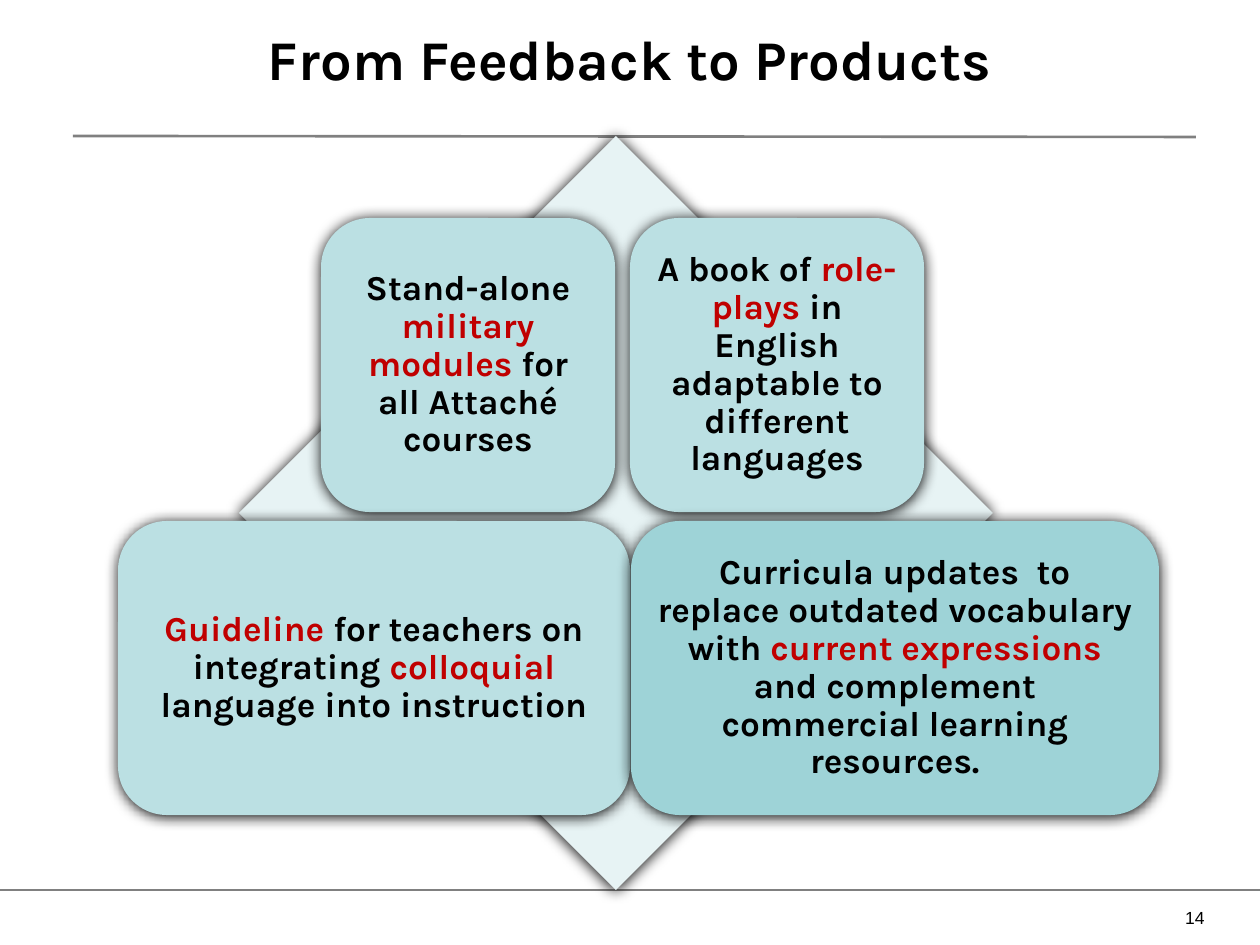
from lxml import etree
from pptx import Presentation
from pptx import util as u
from pptx.dml.color import RGBColor
from pptx.enum import shapes, text
from pptx.oxml import ns

SCALE = 914400 / 126
BLACK, RED, GREY = "000000", "C00000", "808080"
PALE, LIGHT, DEEP = "E7F3F4", "BBE0E3", "9ED3D7"


def px(*lengths):
    """Turn px lengths into EMU."""
    return [round(length * SCALE) for length in lengths]


def colour(code):
    """Turn a hex string into a colour."""
    return RGBColor.from_string(code)


def add_rule(page, start, end, weight):
    """Draw a plain grey line between two points."""
    rule = page.shapes.add_connector(shapes.MSO_CONNECTOR.STRAIGHT, *px(*start, *end))
    rule.line.color.rgb = colour(GREY)
    rule.line.width = u.Pt(weight)
    etree.SubElement(rule._element.spPr, ns.qn("a:effectLst"))


def add_panel(page, kind, box, fill):
    """Add a borderless shape with a soft dark shadow."""
    panel = page.shapes.add_shape(kind, *px(*box))
    panel.fill.solid()
    panel.fill.fore_color.rgb = colour(fill)
    panel.line.fill.background()
    panel.shadow.inherit = False
    effects = panel._element.spPr.find(ns.qn("a:effectLst"))
    shadow = etree.SubElement(
        effects, ns.qn("a:outerShdw"), blurRad=str(u.Pt(8.5)), dist=str(u.Pt(1)),
        dir="5400000", algn="ctr", rotWithShape="0")
    etree.SubElement(shadow, ns.qn("a:srgbClr"), val=BLACK)
    return panel


def add_card(page, box, fill, pieces):
    """Add a rounded card whose text alternates black and red."""
    card = add_panel(page, shapes.MSO_SHAPE.ROUNDED_RECTANGLE, box, fill)
    frame = card.text_frame
    frame.word_wrap = True
    frame.vertical_anchor = text.MSO_ANCHOR.MIDDLE
    inset, = px(10)
    frame.margin_left = frame.margin_right = inset
    frame.margin_top = frame.margin_bottom = inset
    para = frame.paragraphs[0]
    para.alignment = text.PP_ALIGN.CENTER
    para.line_spacing = 0.9
    para.font.size, para.font.name, para.font.bold = u.Pt(20), "Karla", True
    for wording, code in pieces:
        span = para.add_run()
        span.text = wording
        span.font.color.rgb = colour(code)


def add_title(page, box, wording):
    """Place and format the title placeholder."""
    title = page.shapes.title
    title.left, title.top, title.width, title.height = px(*box)
    title.text_frame.vertical_anchor = text.MSO_ANCHOR.MIDDLE
    para = title.text_frame.paragraphs[0]
    para.text = wording
    para.alignment = text.PP_ALIGN.CENTER
    para.font.size, para.font.name, para.font.bold = u.Pt(32), "Karla", True
    para.font.color.rgb = colour(BLACK)


def add_matrix(page, box):
    """Place the diamond and its four cards, top pair narrow and bottom pair wide."""
    left, top, side = box
    add_panel(page, shapes.MSO_SHAPE.DIAMOND, (left, top, side, side), PALE)
    height = 294
    upper, lower = top + 82, top + 385
    cards = [
        (82, upper, 294, LIGHT, [
            ("Stand-alone ", BLACK), ("military modules ", RED),
            ("for all Attaché courses", BLACK)]),
        (391, upper, 294, LIGHT, [
            ("A book of ", BLACK), ("role-plays", RED),
            (" in English adaptable to different languages", BLACK)]),
        (-121, lower, 512, LIGHT, [
            ("Guideline", RED), (" for teachers on integrating ", BLACK),
            ("colloquial ", RED), ("language into instruction", BLACK)]),
        (392, lower, 528, DEEP, [
            ("Curricula updates  to replace outdated vocabulary with ", BLACK),
            ("current expressions ", RED),
            ("and complement commercial learning resources.", BLACK)]),
    ]
    for offset, y, width, fill, pieces in cards:
        add_card(page, (left + offset, y, width, height), fill, pieces)


def add_page_number(page, box, number):
    """Write the page number at the right of its box."""
    label = page.shapes.add_textbox(*px(*box))
    label.text_frame.word_wrap = True
    para = label.text_frame.paragraphs[0]
    para.text = number
    para.alignment = text.PP_ALIGN.RIGHT
    para.font.size, para.font.name = u.Pt(10), "Arial"
    para.font.color.rgb = colour(BLACK)


def main():
    """Build and save the deck."""
    deck = Presentation()
    deck.slide_width, deck.slide_height = px(1260, 945)
    page = deck.slides.add_slide(deck.slide_layouts[5])
    add_rule(page, (73, 136), (1196, 137), 1.5)
    add_rule(page, (0, 890), (1260, 890), 0.75)
    add_page_number(page, (955, 901, 262, 53 - 9), "14")
    add_matrix(page, (239, 136, 754))
    add_title(page, (63, 0, 1134, 116), "From Feedback to Products")
    deck.save("out.pptx")


if __name__ == "__main__":
    main()
